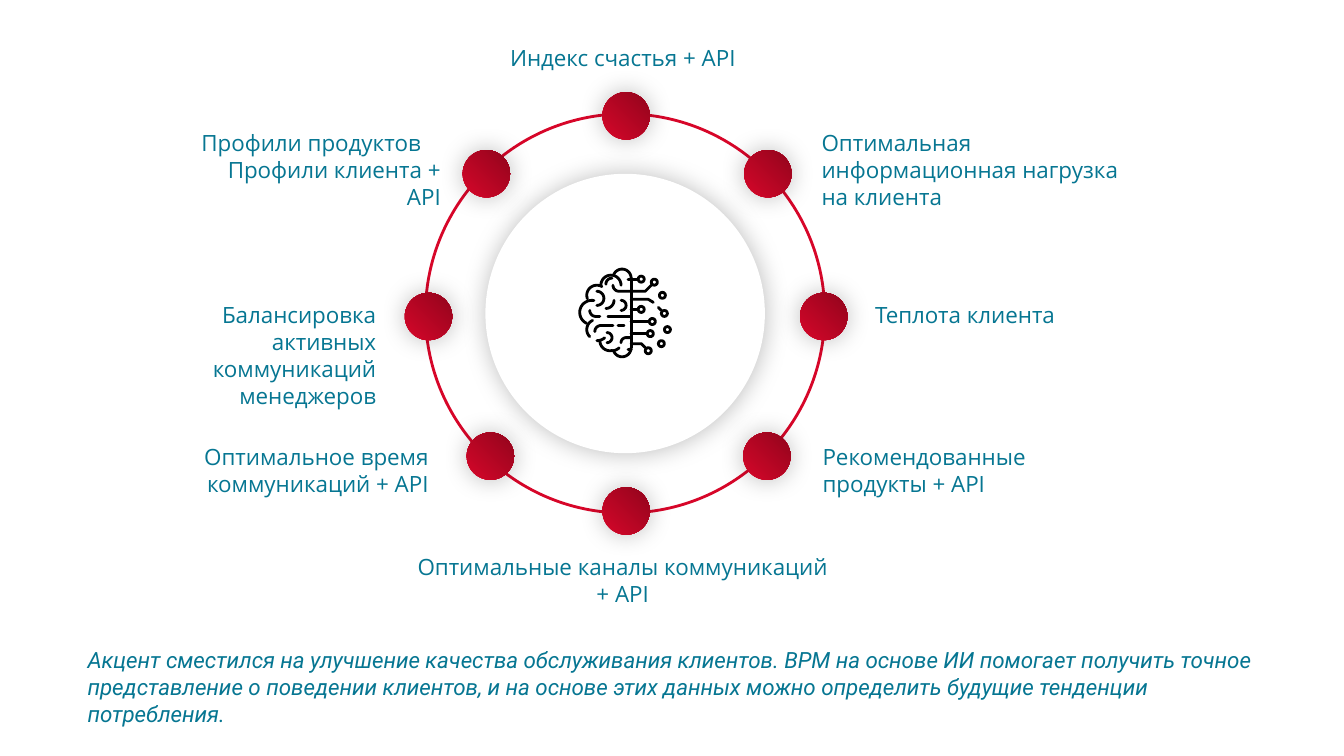
import math

import lxml.etree
import pptx
import pptx.dml.color
import pptx.enum.shapes
import pptx.enum.text
import pptx.oxml.ns
import pptx.util

RGBColor = pptx.dml.color.RGBColor
Inches, Pt = pptx.util.Inches, pptx.util.Pt
qn = pptx.oxml.ns.qn
ALIGN = pptx.enum.text.PP_ALIGN
OVAL = pptx.enum.shapes.MSO_SHAPE.OVAL

RED = RGBColor(0xD7, 0x06, 0x29)
NODE_LIGHT = RGBColor(0xD6, 0x07, 0x2A)
NODE_DARK = RGBColor(0x92, 0x04, 0x1C)
TEAL = RGBColor(0x06, 0x76, 0x92)
WHITE = RGBColor(0xFF, 0xFF, 0xFF)
BLACK = RGBColor(0, 0, 0)

NODE_SIZE = 0.47

# Node: angle clockwise from the right, nudge off the ring.
# Label: offset of its box from the ring centre, size, alignment, paragraphs.
TOPICS = [
    (270, (0, 0), (-1.24, -2.72), (2.49, 0.37), ALIGN.LEFT,
     ["Индекс счастья + API"]),
    (315, (0.02, 0), (1.85, -1.88), (3.29, 0.91), ALIGN.LEFT,
     ["Оптимальная информационная нагрузка на клиента"]),
    (0, (0, 0.03), (2.38, -0.17), (3.29, 0.37), ALIGN.LEFT,
     ["Теплота клиента"]),
    (45, (0.01, 0.03), (1.86, 1.24), (3.29, 0.64), ALIGN.LEFT,
     ["Рекомендованные продукты + API"]),
    (90, (0, 0), (-2.28, 2.33), (4.57, 0.64), ALIGN.CENTER,
     ["Оптимальные каналы коммуникаций ", "+ API "]),
    (135, (0.04, 0.03), (-5.14, 1.24), (3.29, 0.64), ALIGN.RIGHT,
     ["Оптимальное время коммуникаций + API"]),
    (180, (0, 0.03), (-5.14, -0.17), (2.77, 0.91), ALIGN.RIGHT,
     ["Балансировка активных коммуникаций менеджеров"]),
    (225, (0, 0), (-4.3, -1.88), (2.57, 0.91), ALIGN.RIGHT,
     ["Профили продуктов", "Профили клиента + API"]),
]


def arc(cx, cy, radius, start, end, steps=16):
    """Points along an arc, angles in degrees clockwise from the right."""
    angles = [math.radians(start + (end - start) * i / steps)
              for i in range(steps + 1)]
    return [(cx + radius * math.cos(a), cy + radius * math.sin(a))
            for a in angles]


# Brain icon on a grid of hundredths of an inch
LOBES = [
    arc(43, 11, 9, 205, 360), arc(32, 18, 10, 180, 360),
    arc(18, 28, 10, 160, 300), arc(13, 45, 12, 115, 280),
    arc(18, 62, 10, 135, 245), arc(31, 73, 10, 180, 75),
    arc(43, 80, 9, 0, 160), arc(18, 61, 12, 90, 50),
    arc(33, 73, 10, 45, 80),
]
CIRCUITS = [
    [(52, 11), (52, 80)], [(49, 12), (59, 12)],
    arc(40, 18, 6, 180, 90) + [(66, 24), (73, 17)],
    [(52, 32), (69, 32), (74, 35)], [(52, 42), (59, 42)],
    [(29, 49), (52, 49)], arc(47, 75, 5, 180, 270) + [(52, 70)],
    [(49, 82), (52, 82)], [(52, 54), (69, 54)], [(52, 66), (67, 66)],
    [(52, 76), (62, 76), (66, 80)],
]
WIRED_CONTACTS = [arc(x, y, 3, 0, 360) for x, y in
                  [(75, 15), (62, 12), (62, 42), (73, 54), (71, 66),
                   (69, 83)]]
FOLDS = [
    arc(17, 43, 6, 180, 90) + [(21, 49)],
    arc(22, 64, 6, 180, 270) + [(34, 58)],
    arc(27, 33, 8, 0, 90), arc(33, 17, 6, 180, 270),
    arc(28, 70, 5, -90, 90), arc(42, 38, 5, -90, 90),
    arc(18, 31, 7, -90, 90), [(39, 58), (45, 58)], [(79, 40), (82, 43)],
]
LOOSE_CONTACTS = [(83, 28), (85, 46), (88, 62), (82, 76)]


def add_glow(sp):
    """Soft shadow on every side."""
    sp.shadow.inherit = False
    effects = sp._element.spPr.find(qn("a:effectLst"))
    shadow = lxml.etree.SubElement(effects, qn("a:outerShdw"),
                                   blurRad=str(Pt(18)), dist="0", dir="0",
                                   algn="ctr", rotWithShape="0")
    color = lxml.etree.SubElement(shadow, qn("a:srgbClr"), val=str(BLACK))
    lxml.etree.SubElement(color, qn("a:alpha"), val="25000")


def add_circle(slide, cx, cy, size, line=None):
    sp = slide.shapes.add_shape(OVAL, Inches(cx - size / 2),
                                Inches(cy - size / 2),
                                Inches(size), Inches(size))
    sp.shadow.inherit = False
    sp.fill.background()
    if line is None:
        sp.line.fill.background()
    else:
        sp.line.color.rgb = line
        sp.line.width = Pt(2)
    return sp


def add_text(slide, box, paragraphs, font, align=ALIGN.LEFT, italic=False,
             wrap=True):
    tf = slide.shapes.add_textbox(*map(Inches, box)).text_frame
    tf.word_wrap = wrap
    tf.auto_size = pptx.enum.text.MSO_AUTO_SIZE.SHAPE_TO_FIT_TEXT
    tf.text = "\n".join(paragraphs)
    for p in tf.paragraphs:
        p.alignment = align
        for r in p.runs:
            r.font.name = font
            r.font.size = Pt(16)
            r.font.italic = italic
            r.font.color.rgb = TEAL
    return tf


def add_strokes(slide, left, top, strokes):
    """One open outline made of several strokes."""
    paths = [[(Inches(left + x / 100), Inches(top + y / 100))
              for x, y in stroke] for stroke in strokes]
    builder = slide.shapes.build_freeform(*paths[0][0])
    for i, points in enumerate(paths):
        if i:
            builder.move_to(*points[0])
        builder.add_line_segments(points[1:], close=False)
    sp = builder.convert_to_shape()
    sp.shadow.inherit = False
    sp.fill.background()
    sp.line.color.rgb = BLACK
    sp.line.width = Pt(2)
    sp.line._get_or_add_ln().set("cap", "rnd")


def add_brain(slide, left, top):
    for fold in FOLDS:
        add_strokes(slide, left, top, [fold])
    for x, y in LOOSE_CONTACTS:
        add_circle(slide, left + x / 100, top + y / 100, 0.06, BLACK)
    add_strokes(slide, left, top, LOBES + CIRCUITS + WIRED_CONTACTS)


def add_wheel(slide, left, top, size):
    cx, cy = left + size / 2, top + size / 2
    orbit = size * 0.495
    # Hub and ring
    hub = add_circle(slide, cx, cy, size * 0.7)
    hub.fill.solid()
    hub.fill.fore_color.rgb = WHITE
    add_glow(hub)
    add_circle(slide, cx, cy, size, RED)
    # Nodes with their labels
    for angle, (dx, dy), (lx, ly), (w, h), align, paragraphs in TOPICS:
        a = math.radians(angle)
        node = add_circle(slide, cx + 0.01 + orbit * math.cos(a) + dx,
                          cy + orbit * math.sin(a) + dy, NODE_SIZE)
        node.fill.gradient()
        node.fill.gradient_angle = 45
        for stop, color in zip(node.fill.gradient_stops,
                               (NODE_LIGHT, NODE_DARK)):
            stop.color.rgb = color
        add_glow(node)
        tf = add_text(slide, (cx + lx, cy + ly, w, h), paragraphs,
                      "Open Sans", align, wrap=angle != 270)
        if angle == 225:  # first line starts at the left edge
            tf.paragraphs[0].alignment = ALIGN.LEFT
    add_brain(slide, cx - 0.46, cy - 0.46)


def main():
    prs = pptx.Presentation()
    prs.slide_width, prs.slide_height = Inches(13.33), Inches(7.5)
    slide = prs.slides.add_slide(prs.slide_layouts[6])
    add_wheel(slide, 4.22, 1.13, 3.96)
    # Conclusion
    add_text(slide, (0.77, 6.36, 11.84, 0.91),
             ["Акцент сместился на улучшение качества обслуживания клиентов. "
              "BPM на основе ИИ помогает получить точное представление о "
              "поведении клиентов, и на основе этих данных можно определить "
              "будущие тенденции потребления."],
             "Roboto", italic=True)
    prs.save("out.pptx")


if __name__ == "__main__":
    main()
